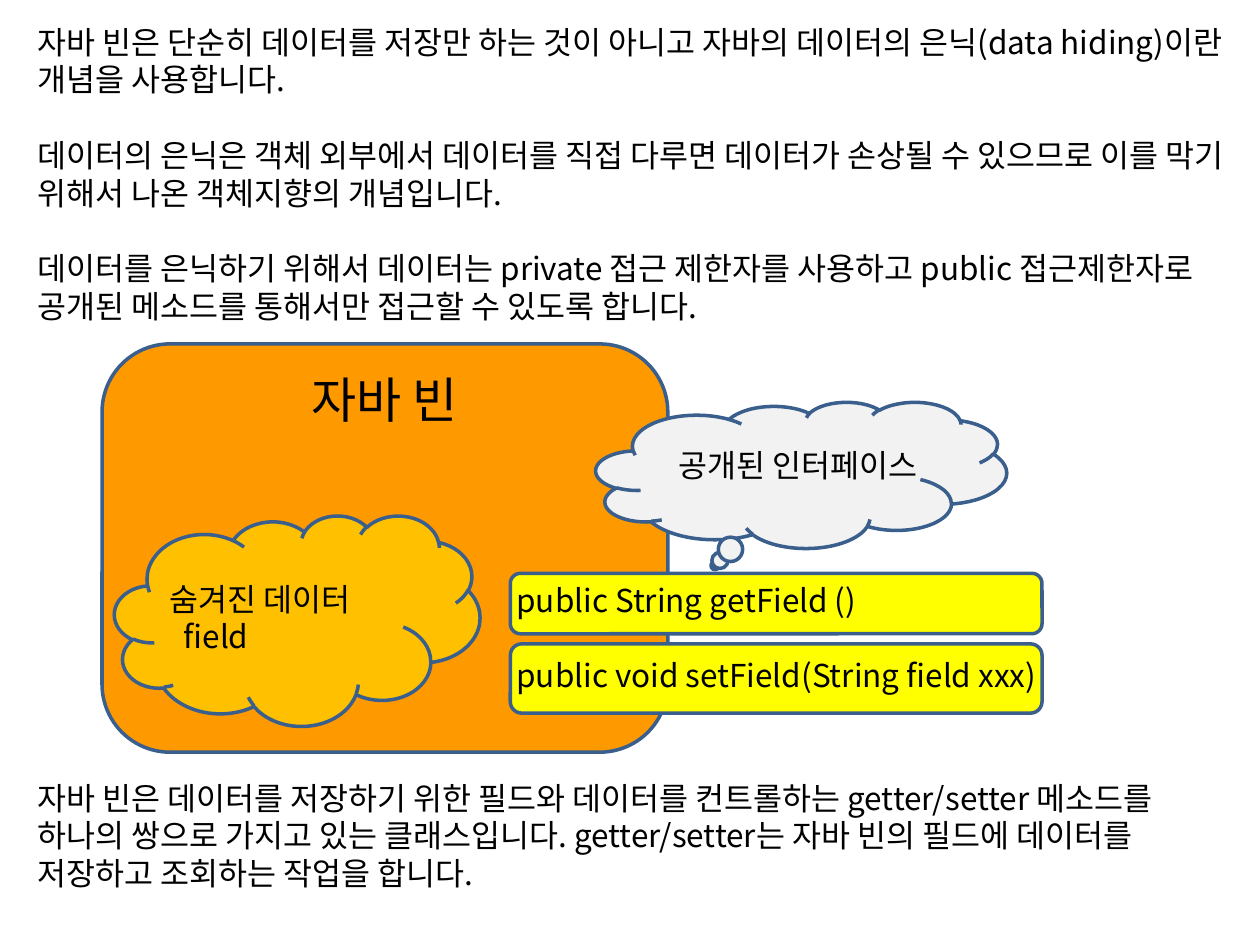
from dataclasses import dataclass
from pptx import Presentation, util as u
from pptx.dml.color import RGBColor
from pptx.enum import shapes as sh, text as tx
from pptx.oxml.ns import qn

COLS, ROWS = 100, 75
CELL = u.Inches(0.1)


@dataclass(frozen=True)
class Theme:
    font: str = "Noto Sans CJK KR"
    ink: str = "000000"
    edge: str = "3A5F8C"
    bean: str = "FF9900"
    data: str = "FFC000"
    code: str = "FFFF00"
    face: str = "F2F2F2"
    body: int = 18
    head: int = 28
    lead: float = 1.2
    rule: int = 2


T = Theme()
LINE = T.body * T.lead
KIND = sh.MSO_SHAPE


def spot(box, col, row, wide, high):
    """Cells counted from the box's corner, as slide lengths."""
    return [int(n * CELL) for n in (box[0] + col, box[1] + row, wide, high)]


def write(frame, lines, size=T.body, align=tx.PP_ALIGN.LEFT):
    """Each line is (runs, gap above in points, indent in cells)."""
    for i, (runs, gap, dent) in enumerate(lines):
        para = frame.paragraphs[0] if i == 0 else frame.add_paragraph()
        para.alignment = align
        para.line_spacing = u.Pt(size * T.lead)
        para.space_before = u.Pt(gap)
        if dent:
            para._p.get_or_add_pPr().set("marL", str(int(dent * CELL)))
        for words in runs:
            run = para.add_run()
            run.text = words
            font = run.font
            font.name, font.size = T.font, u.Pt(size)
            font.color.rgb = RGBColor.from_string(T.ink)
            east = run._r.get_or_add_rPr().makeelement(qn("a:ea"), {"typeface": T.font})
            font._element.find(qn("a:latin")).addnext(east)


def form(host, kind, place, fill):
    part = host.add_shape(kind, *place)
    part.shadow.inherit = False
    part.fill.solid()
    part.fill.fore_color.rgb = RGBColor.from_string(fill)
    part.line.color.rgb = RGBColor.from_string(T.edge)
    part.line.width = u.Pt(T.rule)
    return part


def label(host, place, lines, wrap=True):
    frame = host.add_textbox(*place).text_frame
    frame.word_wrap = wrap
    write(frame, lines)
    return frame


def bean(host, box):
    """Orange class body with its title."""
    part = form(host, KIND.ROUNDED_RECTANGLE, spot(box, 0, 0, *box[2:]), T.bean)
    part.text_frame.vertical_anchor = tx.MSO_ANCHOR.TOP
    write(part.text_frame, [(["자바 빈"], 0, 0)], T.head, tx.PP_ALIGN.CENTER)


def data(host, box):
    """Cloud of hidden data."""
    group = host.add_group_shape().shapes
    form(group, KIND.CLOUD, spot(box, 0, 0, *box[2:]), T.data)
    label(group, spot(box, 3.4, 4.6, 22, 7.1),
          [(["숨겨진 데이터"], 0, 0), (["field"], 0, 1.1)])


def code(host, box):
    """Two public methods in yellow bars."""
    for row, high in ((0, 4.8), (5.6, 5.5)):
        form(host, KIND.ROUNDED_RECTANGLE, spot(box, 0, row, box[2], high), T.code)
    frame = label(host, spot(box, -1.5, 0.1, 44.5, 10.1), [
        (["public String getField ()"], 0, 1),
        (["public void setField(String field xxx)"], LINE, 1)])
    frame.margin_right = 0


def face(host, box):
    """Callout that names the public interface."""
    part = form(host, KIND.CLOUD_CALLOUT, spot(box, 0, 0, *box[2:]), T.face)
    part.adjustments[0], part.adjustments[1] = -0.21, 0.62
    label(host, spot(box, 5.6, 3, 24, 4), [(["공개된 인터페이스"], 0, 0)], False)


def prose(host, box):
    """Text above and below the diagram."""
    label(host, spot(box, 0, 0, *box[2:]), [
        (["자바 빈은 단순히 데이터를 저장만 하는 것이 아니고 자바의 데이터의 은닉(data hiding)이란 "
          "개념을 사용합니다."], 0, 0),
        (["데이터의 은닉은 객체 외부에서 데이터를 직접 다루면 데이터가 손상될 수 있으므로 이를 막기 "
          "위해서 나온 객체지향의 개념입니다."], LINE, 0),
        (["데이터를 은닉하기 위해서 데이터는 private 접근 제한자를 사용하고 public 접근제한자로 "
          "공개된 메소드를 통해서만 접근할 수 있도록 합니다."], LINE, 0),
        (["자바 빈은 데이터를 저장하기 위한 필드와 데이터를 컨트롤하는 getter/setter 메소드를 "
          "하나의 쌍으로 가지고 있는 클래스입니다. getter/setter는 자바 빈의 필드에 데이터를 "
          "저장하고 조회하는 작업을 합니다."], 12 * LINE, 0)])


def main():
    deck = Presentation()
    deck.slide_width, deck.slide_height = COLS * CELL, ROWS * CELL
    host = deck.slides.add_slide(deck.slide_layouts[6]).shapes
    # Regions from back to front: left, top, width, height in cells
    bean(host, (8.1, 27.3, 44.9, 32.4))
    data(host, (9.1, 40.9, 29, 16.7))
    code(host, (40.5, 45.5, 42.2, 11.1))
    face(host, (47.3, 31.9, 32.6, 11.6))
    prose(host, (2, 1.3, 96.1, 73.7))
    deck.save("out.pptx")


if __name__ == "__main__":
    main()
